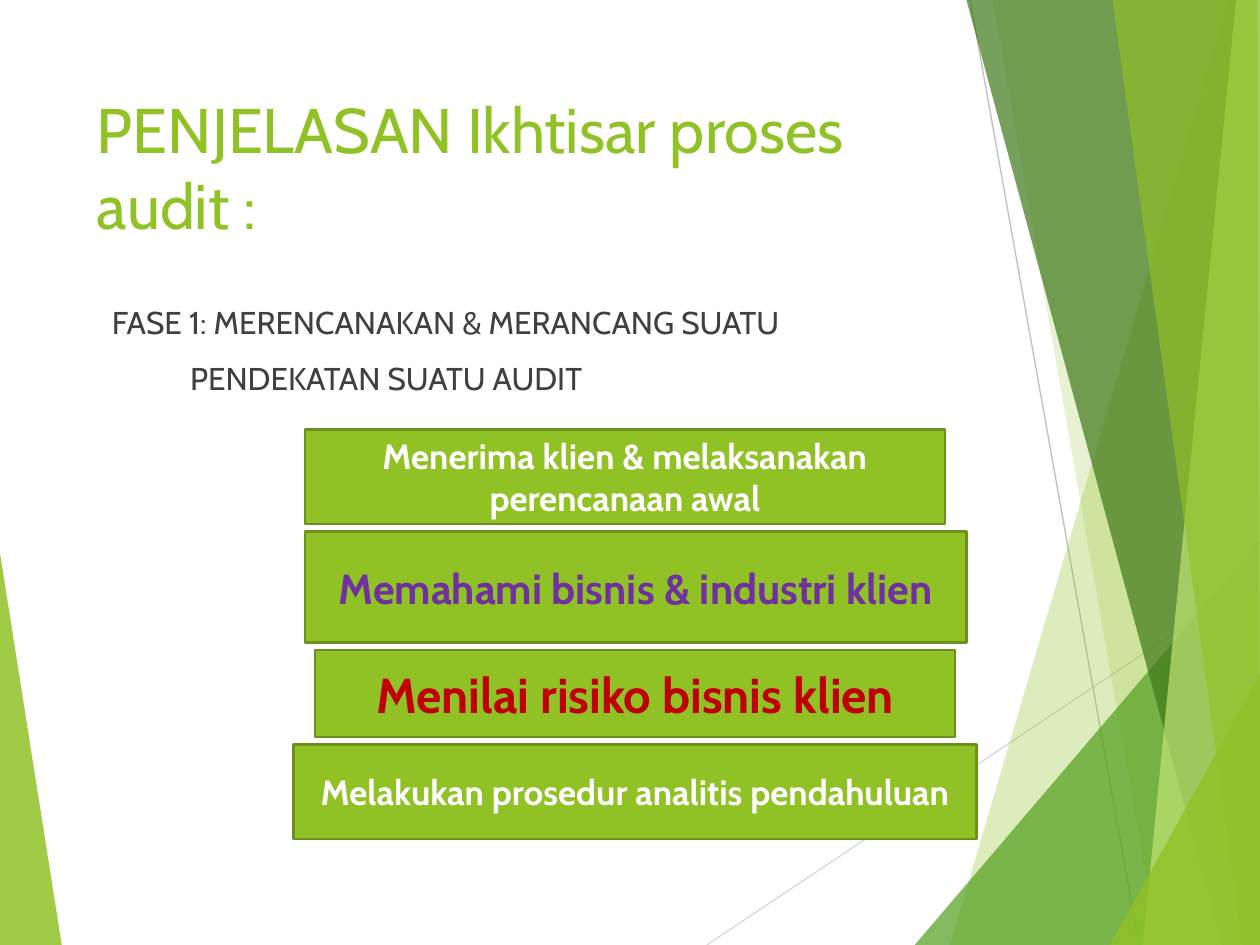
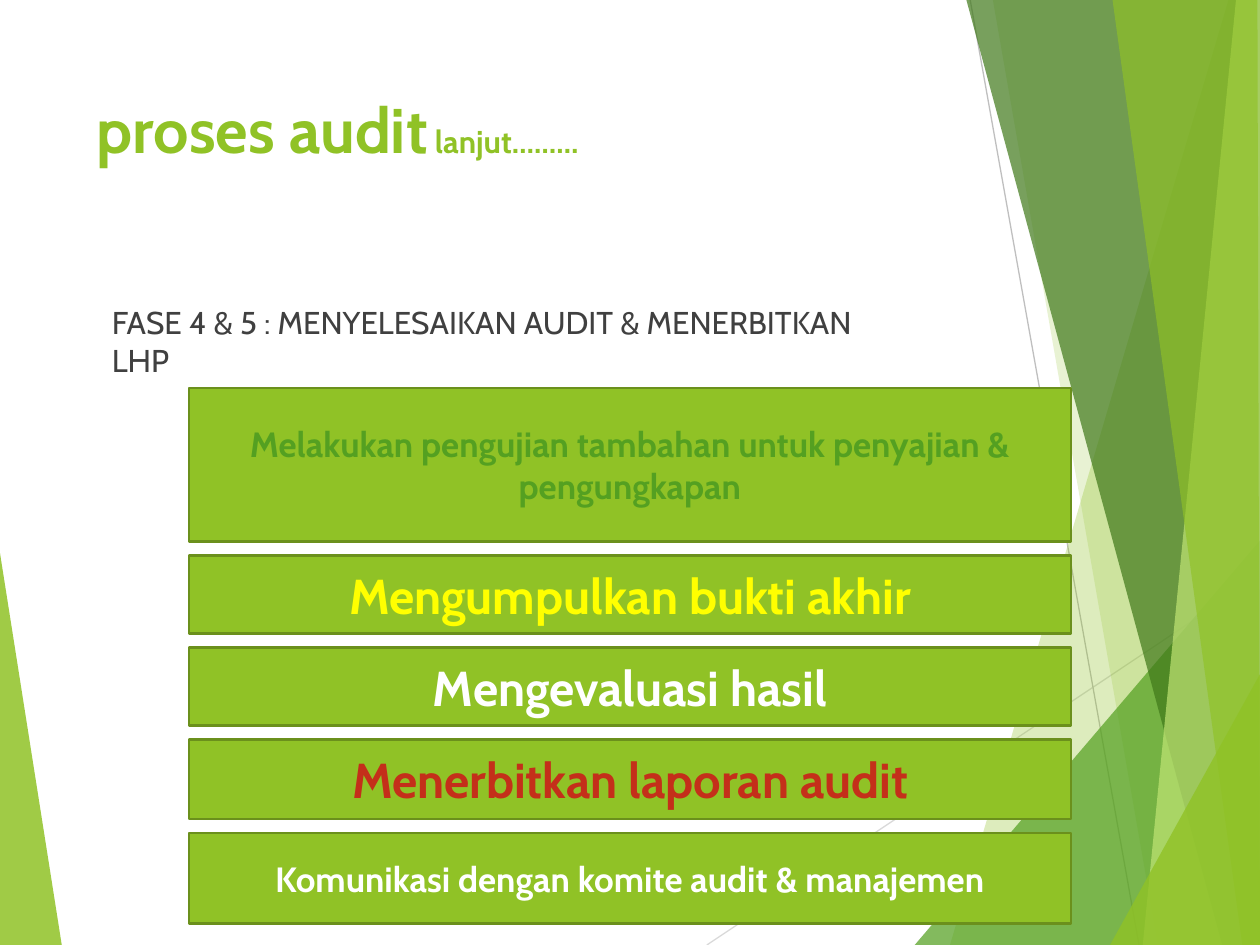
from lxml import etree
from pptx import Presentation
from pptx.dml.color import RGBColor
from pptx.enum.shapes import MSO_CONNECTOR, MSO_SHAPE
from pptx.enum.text import MSO_ANCHOR, PP_ALIGN
from pptx.oxml.ns import qn
from pptx.util import Inches, Pt

STRAIGHT = MSO_CONNECTOR.STRAIGHT
RECTANGLE = MSO_SHAPE.RECTANGLE
MIDDLE = MSO_ANCHOR.MIDDLE
CENTER = PP_ALIGN.CENTER

FONT = "Cabin"
COLORS = {
    "lime": "90C226", "leaf": "54A021", "forest": "3F7819", "pale": "C0E474",
    "edge": "6B901C", "body": "404040", "white": "FFFFFF", "purple": "7030A0",
    "crimson": "C00000", "yellow": "FFFF00", "brick": "C42F1A",
    "light gray": "D9D9D9", "gray": "BFBFBF",
}

# Title runs: text, size, bold. Phase lines: text, indent.
# Steps: text, size, colour, left, width, height.
SLIDES = [
    {
        "title": [("PENJELASAN Ikhtisar proses audit :", 36, False)],
        "phase": [("FASE 1: MERENCANAKAN & MERANCANG SUATU", 0.12),
                  ("PENDEKATAN SUATU AUDIT", 0.74)],
        "top": 3.41, "gap": 0.06,
        "steps": [
            ("Menerima klien & melaksanakan perencanaan awal", 20, "white", 2.42, 5.08, 0.75),
            ("Memahami bisnis & industri klien", 24, "purple", 2.42, 5.25, 0.88),
            ("Menilai risiko bisnis klien", 28, "crimson", 2.5, 5.08, 0.69),
            ("Melakukan prosedur analitis pendahuluan", 20, "white", 2.33, 5.42, 0.75),
        ],
    },
    {
        "title": [("proses audit", 36, True), (" lanjut………", 18, True)],
        "phase": [("FASE 4 & 5 : MENYELESAIKAN AUDIT & MENERBITKAN\vLHP", 0.12)],
        "top": 3.08, "gap": 0.11,
        "steps": [
            ("Melakukan pengujian tambahan untuk penyajian & pengungkapan",
             20, "leaf", 1.5, 7, 1.22),
            ("Mengumpulkan bukti akhir", 28, "yellow", 1.5, 7, 0.62),
            ("Mengevaluasi hasil", 28, "white", 1.5, 7, 0.62),
            ("Menerbitkan laporan audit", 28, "brick", 1.5, 7, 0.63),
            ("Komunikasi dengan komite audit & manajemen", 20, "white", 1.5, 7, 0.72),
        ],
    },
]

# Colour, opacity in percent, corners
LEFT_FACET = ("lime", 85, [(0, 4.39), (0.49, 7.5), (0, 7.5)])
RAYS = [("light gray", (5.61, 7.5), (10, 4.57)), ("gray", (7.7, 0), (9.04, 7.5))]
RIGHT_FACETS = [
    ("lime", 30, [(9.75, 0), (7.54, 7.5), (10, 7.5), (10, 0)]),
    ("lime", 20, [(7.88, 0), (9.19, 7.5), (10, 7.5), (10, 0)]),
    ("leaf", 72, [(7.26, 7.5), (10, 4.29), (10, 7.5)]),
    ("forest", 70, [(7.67, 0), (9.7, 7.5), (10, 7.5), (10, 0)]),
    ("pale", 70, [(9.81, 0), (9.07, 7.5), (10, 7.5), (10, 0)]),
    ("lime", 65, [(8.83, 0), (9.86, 7.5), (10, 7.5), (9.98, 0)]),
    ("lime", 80, [(8.81, 7.5), (10, 5.35), (10, 7.5)]),
]


def rgb(name):
    return RGBColor.from_string(COLORS[name])


def set_font(font, size, color, bold=False):
    font.name, font.size, font.bold = FONT, Pt(size), bold
    font.color.rgb = rgb(color)


def add_facet(slide, color, opacity, corners):
    points = [(Inches(x), Inches(y)) for x, y in corners]
    builder = slide.shapes.build_freeform(*points[0])
    builder.add_line_segments(points[1:], close=True)
    facet = builder.convert_to_shape()
    facet.shadow.inherit = False
    facet.line.fill.background()
    facet.fill.solid()
    facet.fill.fore_color.rgb = rgb(color)
    tint = facet.fill._xPr.find(".//" + qn("a:srgbClr"))
    etree.SubElement(tint, qn("a:alpha")).set("val", str(opacity * 1000))


def add_ray(slide, color, start, end):
    ray = slide.shapes.add_connector(STRAIGHT, *map(Inches, start + end))
    ray.line.color.rgb = rgb(color)
    ray.line.width = Pt(0.75)
    etree.SubElement(ray._element.spPr, qn("a:effectLst"))


def add_backdrop(slide):
    add_facet(slide, *LEFT_FACET)
    for ray in RAYS:
        add_ray(slide, *ray)
    for facet in RIGHT_FACETS:
        add_facet(slide, *facet)


def add_text_frame(slide, top, height):
    frame = slide.shapes.add_textbox(*map(Inches, (0.67, top, 6.94, height))).text_frame
    frame.word_wrap = True
    return frame


def add_title(slide, runs):
    paragraph = add_text_frame(slide, 0.67, 1.44).paragraphs[0]
    for text, size, bold in runs:
        run = paragraph.add_run()
        run.text = text
        set_font(run.font, size, "lime", bold)


def add_phase(slide, lines):
    frame = add_text_frame(slide, 2.36, 0.9)
    for i, (text, indent) in enumerate(lines):
        paragraph = frame.add_paragraph() if i else frame.paragraphs[0]
        paragraph.text = text
        paragraph.space_before = Pt(10)
        paragraph._p.get_or_add_pPr().set("marL", str(Inches(indent)))
        set_font(paragraph.font, 18, "body")


def add_steps(slide, steps, top, gap):
    for text, size, color, left, width, height in steps:
        step = slide.shapes.add_shape(RECTANGLE, *map(Inches, (left, top, width, height)))
        step.shadow.inherit = False
        step.fill.solid()
        step.fill.fore_color.rgb = rgb("lime")
        step.line.color.rgb = rgb("edge")
        step.line.width = Pt(1.5)
        frame = step.text_frame
        frame.word_wrap = True
        frame.vertical_anchor = MIDDLE
        paragraph = frame.paragraphs[0]
        paragraph.text = text
        paragraph.alignment = CENTER
        set_font(paragraph.font, size, color, True)
        top += height + gap


def main():
    deck = Presentation()
    deck.slide_width, deck.slide_height = Inches(10), Inches(7.5)
    for content in SLIDES:
        slide = deck.slides.add_slide(deck.slide_layouts[6])
        add_backdrop(slide)
        add_title(slide, content["title"])
        add_phase(slide, content["phase"])
        add_steps(slide, content["steps"], content["top"], content["gap"])
    deck.save("out.pptx")


if __name__ == "__main__":
    main()
